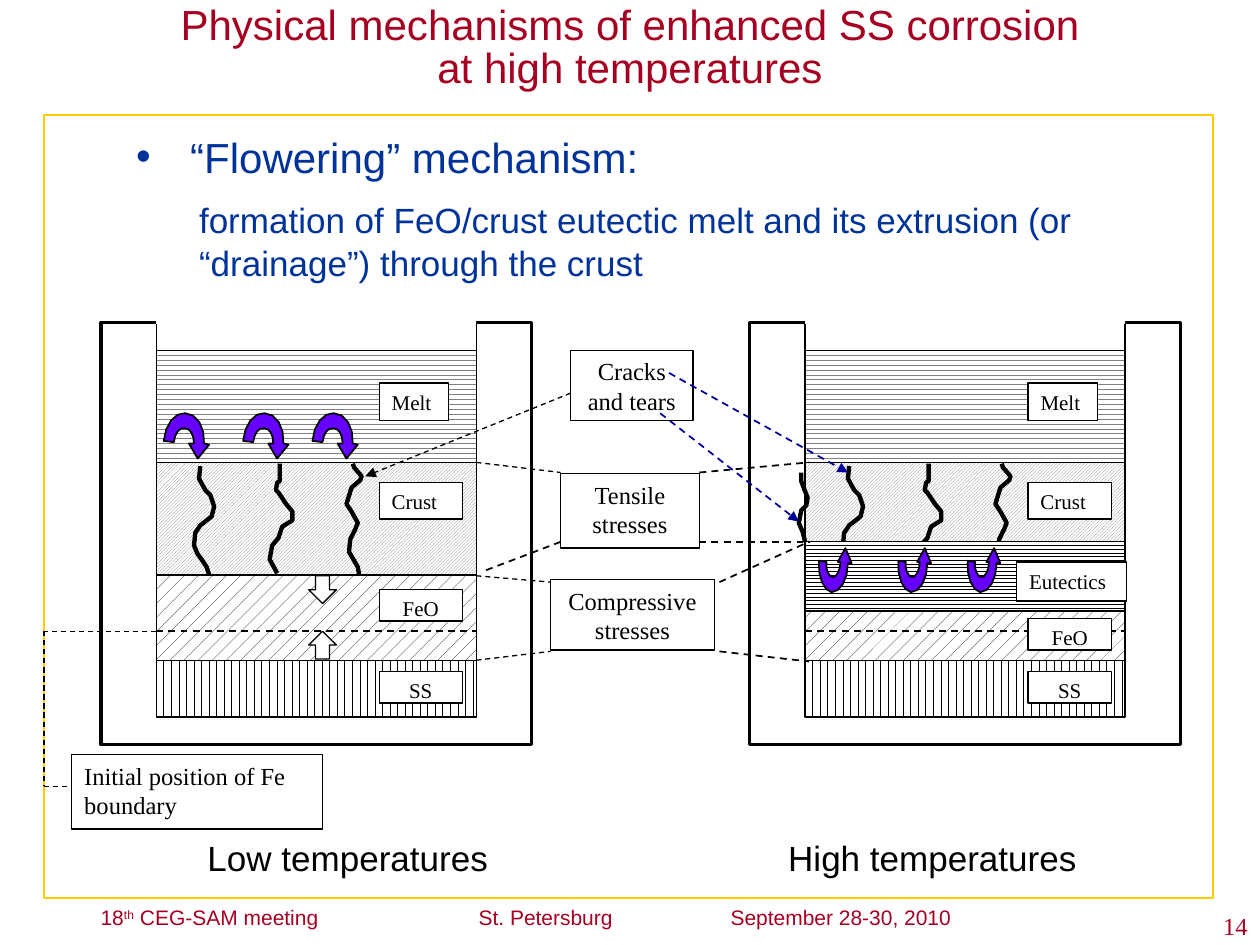
from lxml import etree
from pptx import Presentation
from pptx.dml.color import RGBColor
from pptx.enum.dml import MSO_LINE, MSO_PATTERN as PAT
from pptx.enum.shapes import MSO_CONNECTOR, MSO_SHAPE as SHP
from pptx.enum.text import MSO_ANCHOR, MSO_AUTO_SIZE, PP_ALIGN
from pptx.oxml.ns import qn
from pptx.util import Inches, Pt

RED, BLUE, NAVY, BLACK, WHITE, GRAY = "A50021", "003399", "000099", "000000", "FFFFFF", "808080"
PURPLE, GOLD = "6600FF", "FFCC00"
SERIF = "Times New Roman"
L, C, R = PP_ALIGN.LEFT, PP_ALIGN.CENTER, PP_ALIGN.RIGHT

TITLE = "Physical mechanisms of enhanced SS corrosion at high temperatures"
BODY = [("“Flowering” mechanism:", 24, 0.43, -0.43, 0),
        ("formation of FeO/crust eutectic melt and its extrusion (or “drainage”) through the crust",
         20, 0.5, 0, 10)]
FOOTER = [("18", None), ("th", "30000"), (" CEG-SAM meeting\tSt. Petersburg\tSeptember 28-30, 2010", None)]
FOOTER_TABS = (3, 5)
CAPTIONS = [("Low temperatures", 0.75), ("High temperatures", 5.39)]

LEFT, RIGHT, LAYER_W = 1.24, 6.39, 2.54
LAYERS = [(5.24, 0.45, PAT.DASHED_VERTICAL, BLACK),
          (4.57, 0.67, PAT.PERCENT_10, BLACK),
          (3.67, 0.89, PAT.LIGHT_UPWARD_DIAGONAL, GRAY),
          (2.78, 0.89, PAT.WAVE, GRAY)]
LABELS = [("Melt", 3.04, 0.55, 0.3, L), ("Crust", 3.83, 0.66, 0.29, L), ("SS", 5.33, 0.66, 0.25, C)]
FEO_TOP = {LEFT: 4.68, RIGHT: 4.91}
CALLOUTS = [("Compressive stresses", 4.37, 4.6, 1.3, 0.56, C),
            ("Tensile stresses", 4.45, 3.76, 1.1, 0.59, C),
            ("Cracks and tears", 4.53, 2.78, 0.97, 0.56, C),
            ("Initial position of Fe boundary", 0.57, 5.99, 1.99, 0.59, L)]

CRACKS = [
    [(1.66, 4.56), (1.64, 4.5), (1.6, 4.44), (1.57, 4.4), (1.54, 4.33), (1.55, 4.23), (1.59, 4.17),
     (1.68, 4.1), (1.7, 4.02), (1.67, 3.93), (1.63, 3.89), (1.58, 3.8), (1.59, 3.7)],
    [(2.2, 4.55), (2.14, 4.44), (2.16, 4.33), (2.21, 4.27), (2.24, 4.18), (2.32, 4.13), (2.32, 4.06),
     (2.27, 4), (2.21, 3.91), (2.19, 3.89), (2.2, 3.83), (2.22, 3.82), (2.22, 3.68)],
    [(2.85, 4.56), (2.84, 4.5), (2.77, 4.38), (2.78, 4.28), (2.82, 4.2), (2.84, 4.15), (2.79, 4.06),
     (2.75, 4), (2.79, 3.87), (2.86, 3.81), (2.87, 3.78), (2.81, 3.71), (2.8, 3.68)]]
EDGE_CRACK = [(6.39, 4.3), (6.37, 4.22), (6.34, 4.15), (6.36, 4.05), (6.4, 4.01),
              (6.41, 3.95), (6.39, 3.9), (6.36, 3.82), (6.36, 3.75)]

HOOK_STEPS = (0, 0.63, 1.18)
DOWN_HOOK = [(1.54, 3.52), (1.54, 3.45, 1.51, 3.4, 1.47, 3.4), (1.42, 3.39, 1.39, 3.44, 1.38, 3.51),
             (1.3, 3.5), (1.31, 3.37, 1.39, 3.27, 1.47, 3.28), (1.56, 3.28, 1.63, 3.39, 1.62, 3.52),
             (1.66, 3.53), (1.57, 3.64), (1.5, 3.52)]
UP_HOOK = [(6.67, 4.46), (6.67, 4.53, 6.64, 4.58, 6.61, 4.58), (6.58, 4.58, 6.55, 4.52, 6.56, 4.46),
           (6.5, 4.45), (6.49, 4.58, 6.54, 4.69, 6.6, 4.7), (6.67, 4.7, 6.73, 4.6, 6.73, 4.47),
           (6.76, 4.47), (6.71, 4.35), (6.65, 4.46)]

THIN_LINES = [(1.24, 5.01, 0.35, 5.01), (0.35, 5.01, 0.35, 6.24), (0.35, 6.24, 0.57, 6.24),
              (3.78, 5.24, 4.37, 5.17), (3.78, 4.57, 4.37, 4.62), (3.78, 3.67, 4.45, 3.75)]
STRESS_LINES = [(5.71, 5.17, 6.42, 5.25), (5.71, 4.62, 6.42, 4.3), (5.55, 4.3, 6.42, 4.3),
                (5.55, 3.75, 6.42, 3.67), (4.45, 4.3, 3.82, 4.54)]
CRACK_ARROWS = [(5.31, 2.96, 6.73, 3.75), (5.24, 3.28, 6.34, 4.14)]

prs = Presentation()
prs.slide_width, prs.slide_height = Inches(10), Inches(7.5)
s = prs.slides.add_slide(prs.slide_layouts[1])


def rgb(color):
    return RGBColor.from_string(color)


def style_font(font, size, color, name="Arial"):
    font.size, font.name, font.color.rgb = Pt(size), name, rgb(color)


def place(sp, x, y, w, h):
    sp.left, sp.top, sp.width, sp.height = map(Inches, (x, y, w, h))


def paint(sp, fill, line, width=0.75, pattern=None):
    sp.shadow.inherit = False
    if pattern is not None:
        sp.fill.patterned()
        sp.fill.pattern = pattern
        sp.fill.fore_color.rgb, sp.fill.back_color.rgb = rgb(fill), rgb(WHITE)
    elif fill:
        sp.fill.solid()
        sp.fill.fore_color.rgb = rgb(fill)
    else:
        sp.fill.background()
    if line:
        sp.line.color.rgb, sp.line.width = rgb(line), Pt(width)
    else:
        sp.line.fill.background()


def add_box(x, y, w, h, fill=WHITE, line=BLACK, width=0.75, pattern=None, kind=SHP.RECTANGLE):
    sp = s.shapes.add_shape(kind, *map(Inches, (x, y, w, h)))
    paint(sp, fill, line, width, pattern)
    return sp


def write(sp, text, size, color, name, align):
    tf = sp.text_frame
    tf.word_wrap, tf.vertical_anchor = True, MSO_ANCHOR.TOP
    p = tf.paragraphs[0]
    p.text, p.alignment = text, align
    style_font(p.runs[0].font, size, color, name)


def add_label(text, x, y, w, h, align, size=12):
    write(add_box(x, y, w, h), text, size, BLACK, SERIF, align)


def add_text(text, x, y, w, h, size, color, name, align):
    sp = s.shapes.add_textbox(*map(Inches, (x, y, w, h)))
    write(sp, text, size, color, name, align)


def add_dash(ends, color=BLACK, width=1, arrow=False):
    cx = s.shapes.add_connector(MSO_CONNECTOR.STRAIGHT, *map(Inches, ends))
    cx.line.color.rgb, cx.line.width, cx.line.dash_style = rgb(color), Pt(width), MSO_LINE.DASH
    if arrow:
        etree.SubElement(cx.line._get_or_add_ln(), qn("a:tailEnd"), type="triangle")
    etree.SubElement(cx._element.spPr, qn("a:effectLst"))


def trace(path, n=4):
    pts = [path[0]]
    for step in path[1:]:
        if len(step) == 2:
            pts.append(step)
            continue
        ctrl = [pts[-1], step[:2], step[2:4], step[4:]]
        for t in (i / n for i in range(1, n + 1)):
            weights = ((1 - t) ** 3, 3 * t * (1 - t) ** 2, 3 * t * t * (1 - t), t ** 3)
            pts.append(tuple(sum(k * c[axis] for k, c in zip(weights, ctrl)) for axis in (0, 1)))
    return pts


def add_outline(path, dx, fill, width, close):
    pts = [(Inches(x + dx), Inches(y)) for x, y in trace(path)]
    fb = s.shapes.build_freeform(*pts[0])
    fb.add_line_segments(pts[1:], close=close)
    paint(fb.convert_to_shape(), fill, BLACK, width)


def add_vessel(x):
    for y, h, pattern, color in LAYERS:
        add_box(x, y, LAYER_W, h, color, pattern=pattern)
    add_box(x - 0.44, 2.56, 3.42, 3.35, None, width=2)
    add_box(x, 2.56, LAYER_W, 0.22)
    add_box(x, 2.35, LAYER_W, 0.22, line=None)
    add_dash((x, 5.01, x + LAYER_W, 5.01))
    for text, y, w, h, align in LABELS:
        add_label(text, x + 1.77, y, w, h, align)
    add_label("FeO", x + 1.77, FEO_TOP[x], 0.66, 0.25, C)
    for crack in CRACKS:
        add_outline(crack, x - LEFT, None, 2.5, False)


title, body = s.shapes.title, s.placeholders[1]
place(title, 1.3, 0, 7.4, 0.91)
write(title, TITLE, 24, RED, "Arial", C)
title.text_frame.auto_size = MSO_AUTO_SIZE.NONE
title.text_frame.paragraphs[0].line_spacing = 0.85

place(body, 0.98, 0.99, 7.8, 1.33)
tf = body.text_frame
tf.auto_size = MSO_AUTO_SIZE.NONE
tf.text = "\n".join(item[0] for item in BODY)
for p, (_, size, margin, indent, before) in zip(tf.paragraphs, BODY):
    pPr = p._p.get_or_add_pPr()
    pPr.set("marL", str(Inches(margin)))
    pPr.set("indent", str(Inches(indent)))
    if indent:
        etree.SubElement(pPr, qn("a:buChar"), char="•")
    else:
        etree.SubElement(pPr, qn("a:buNone"))
    p.space_before = Pt(before)
    style_font(p.runs[0].font, size, BLUE)

add_box(0.35, 0.91, 9.28, 6.22, None, GOLD, 1)
footer = s.shapes.add_textbox(*map(Inches, (0.7, 7.13, 7.05, 0.3)))
p = footer.text_frame.paragraphs[0]
tabs = etree.SubElement(p._p.get_or_add_pPr(), qn("a:tabLst"))
for pos in FOOTER_TABS:
    etree.SubElement(tabs, qn("a:tab"), pos=str(Inches(pos)), algn="l")
for text, baseline in FOOTER:
    r = p.add_run()
    r.text = text
    style_font(r.font, 12, RED)
    if baseline:
        r._r.get_or_add_rPr().set("baseline", baseline)
add_text("14", 7.92, 7.18, 2.08, 0.32, 14, RED, SERIF, R)
for text, x in CAPTIONS:
    add_text(text, x, 6.59, 4.02, 0.43, 20, BLACK, "Arial", C)

add_vessel(LEFT)
for kind, y in ((SHP.DOWN_ARROW, 4.57), (SHP.UP_ARROW, 5.01)):
    add_box(2.45, y, 0.22, 0.22, kind=kind)
add_vessel(RIGHT)
add_box(RIGHT, 4.3, LAYER_W, 0.55, BLACK, pattern=PAT.ZIG_ZAG)
add_label("Eutectics", 8.07, 4.46, 0.87, 0.31, L)
for hook in (UP_HOOK, DOWN_HOOK):
    for dx in HOOK_STEPS:
        add_outline(hook, dx, PURPLE, 1, True)
add_outline(EDGE_CRACK, 0, None, 2.5, False)

for ends in THIN_LINES:
    add_dash(ends, width=0.75)
for ends in STRESS_LINES:
    add_dash(ends)
add_dash((4.53, 3.12, 2.9, 3.78), width=0.75, arrow=True)
for callout in CALLOUTS:
    add_label(*callout, size=14)
for ends in CRACK_ARROWS:
    add_dash(ends, NAVY, arrow=True)

prs.save("out.pptx")
